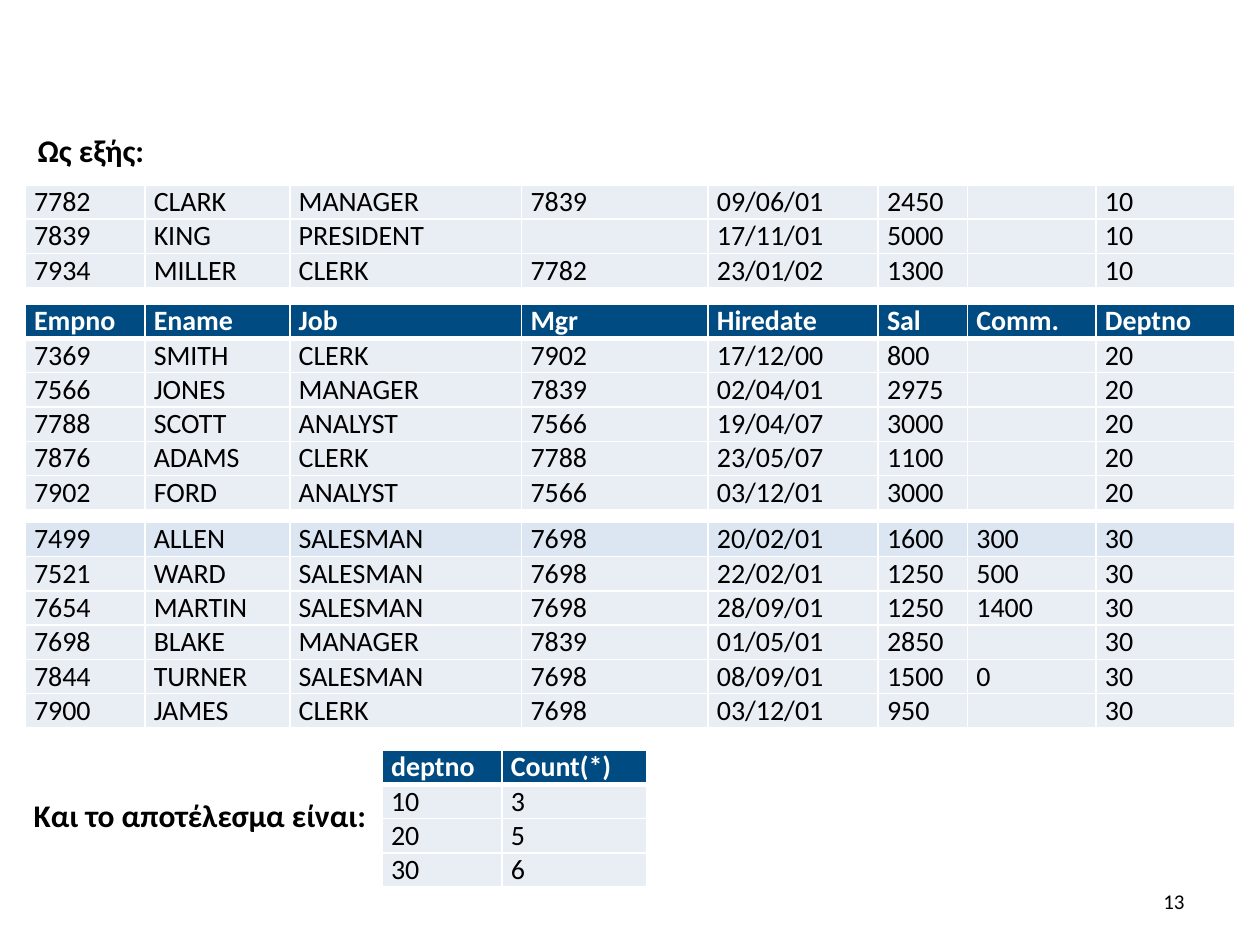
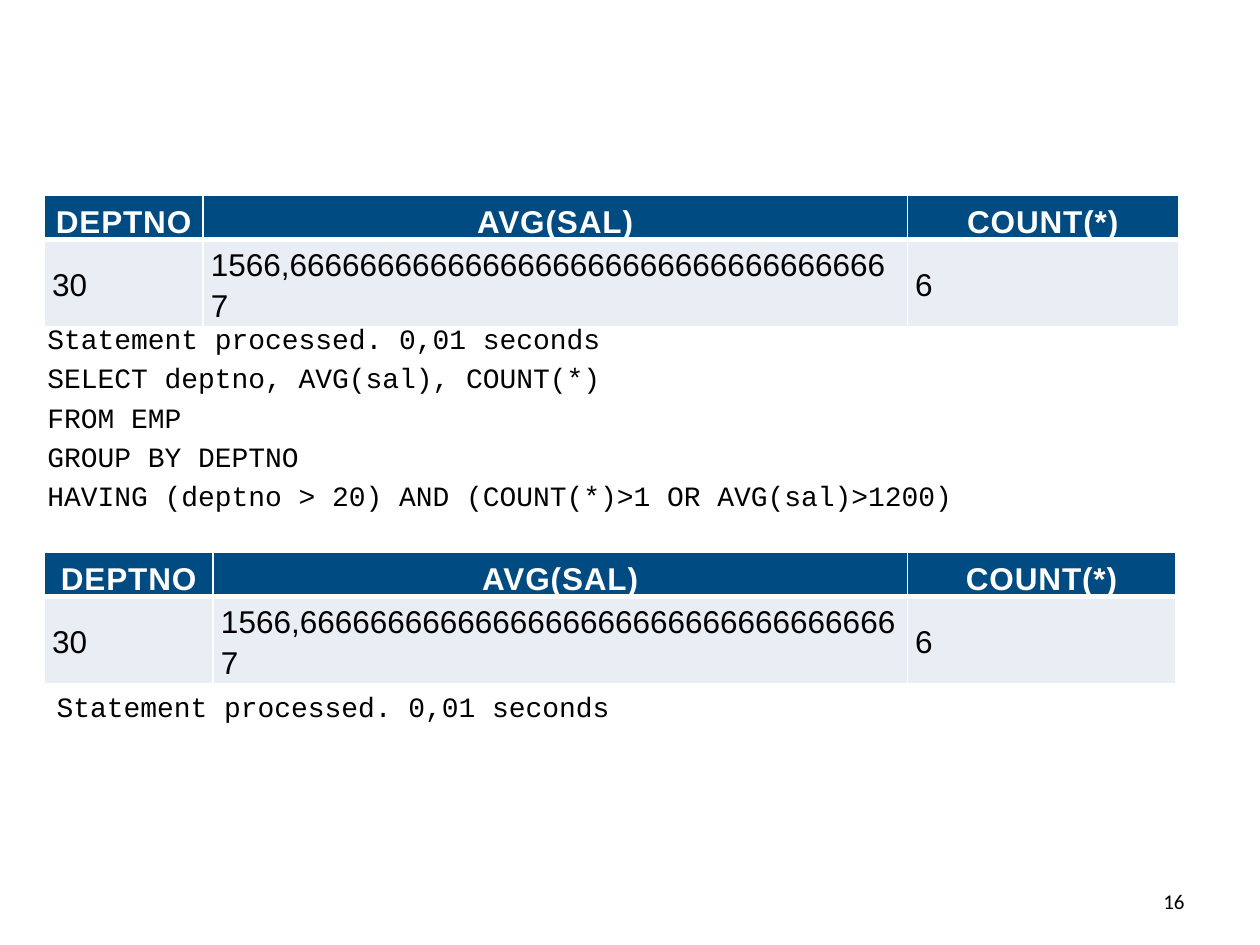
"""Build two slides on SQL grouping: employees split by department, and HAVING results."""
from lxml.etree import SubElement
from pptx import Presentation
from pptx.dml.color import RGBColor
from pptx.enum.text import MSO_ANCHOR, MSO_AUTO_SIZE, PP_ALIGN
from pptx.oxml.ns import qn
from pptx.util import Pt

NAVY, PALE, LIGHT_BLUE = "004B82", "E9EDF4", "DCE6F2"
WHITE, BLACK = "FFFFFF", "000000"

LABEL = {"name": "Calibri", "size": Pt(18), "bold": True}
CODE = {"name": "Courier New", "size": Pt(16)}
PAGE_NUMBER = {"name": "Calibri", "size": Pt(12)}
EMPLOYEE_STYLE = {
    "font": {"name": "Calibri", "size": Pt(16)},
    "cell": {"margin_left": Pt(5.1), "margin_right": Pt(5.1), "margin_top": 0, "margin_bottom": 0},
    "paragraph": {},
    "header_cell": {},
    "header_paragraph": {},
    "header_spacing": "0",
}
RESULT_STYLE = {
    "font": {"name": "Arial", "size": Pt(18)},
    "cell": {"margin_left": Pt(4.5), "margin_right": Pt(4.5), "margin_top": 0,
             "margin_bottom": 0, "vertical_anchor": MSO_ANCHOR.MIDDLE},
    "paragraph": {"line_spacing": 1.15},
    "header_cell": {"vertical_anchor": MSO_ANCHOR.BOTTOM},
    "header_paragraph": {"alignment": PP_ALIGN.CENTER},
    "header_spacing": "50",
}


def add_text(slide, box, lines, font, frame_format, paragraph_format):
    """Add a text box with one paragraph for each line."""
    frame = slide.shapes.add_textbox(*map(Pt, box)).text_frame
    for name, value in {"word_wrap": True, **frame_format}.items():
        setattr(frame, name, value)
    for index, line in enumerate(lines):
        paragraph = frame.add_paragraph() if index else frame.paragraphs[0]
        run = paragraph.add_run()
        run.text = line
        run.font.color.rgb = RGBColor.from_string(BLACK)
        for target, values in ((paragraph, paragraph_format), (run.font, font)):
            for name, value in values.items():
                setattr(target, name, value)


def add_grid(slide, left, top, widths, row_height, rows, style, has_header, first_fill):
    """Add a table with white rules, from rows of text parted by bars."""
    shape = slide.shapes.add_table(len(rows), len(widths), Pt(left), Pt(top),
                                   Pt(sum(widths)), Pt(row_height * len(rows)))
    table = shape.table
    table.first_row = has_header
    table.horz_banding = False
    for column, width in zip(table.columns, widths):
        column.width = Pt(width)
    for row_index, row in enumerate(rows):
        table.rows[row_index].height = Pt(row_height)
        is_header = has_header and row_index == 0
        for column_index, text in enumerate(row.split("|")):
            cell = table.cell(row_index, column_index)
            properties = cell._tc.get_or_add_tcPr()
            rules = {"a:lnL": 1, "a:lnR": 1,
                     "a:lnT": 3 if has_header and row_index == 1 else 1,
                     "a:lnB": 3 if is_header else 1}
            for tag, weight in rules.items():
                line = SubElement(properties, qn(tag), w=str(Pt(weight)))
                SubElement(SubElement(line, qn("a:solidFill")), qn("a:srgbClr"), val=WHITE)
            cell.fill.solid()
            cell.fill.fore_color.rgb = RGBColor.from_string(PALE if row_index else first_fill)
            paragraph = cell.text_frame.paragraphs[0]
            formats = [(cell, style["cell"]), (paragraph, style["paragraph"])]
            if is_header:
                formats += [(cell, style["header_cell"]), (paragraph, style["header_paragraph"])]
            if text:
                run = paragraph.add_run()
                run.text = text
                run.font.bold = is_header
                run.font.color.rgb = RGBColor.from_string(WHITE if is_header else BLACK)
                if is_header:
                    run._r.get_or_add_rPr().set("spc", style["header_spacing"])
                formats.append((run.font, style["font"]))
            else:
                size = str(int(style["font"]["size"].pt * 100))
                SubElement(paragraph._p, qn("a:endParaRPr"), sz=size)
            for target, values in formats:
                for name, value in values.items():
                    setattr(target, name, value)


presentation = Presentation()
presentation.slide_width, presentation.slide_height = Pt(720), Pt(540)
grouping_slide, having_slide = [
    presentation.slides.add_slide(presentation.slide_layouts[6]) for _ in range(2)]

employee_widths = [68.4, 82.8, 132.5, 106.5, 97.2, 51.1, 73.5, 79.2]
department_20 = [
    "Empno|Ename|Job|Mgr|Hiredate|Sal|Comm.|Deptno",
    "7369|SMITH|CLERK|7902|17/12/00|800||20",
    "7566|JONES|MANAGER|7839|02/04/01|2975||20",
    "7788|SCOTT|ANALYST|7566|19/04/07|3000||20",
    "7876|ADAMS|CLERK|7788|23/05/07|1100||20",
    "7902|FORD|ANALYST|7566|03/12/01|3000||20",
]
department_30 = [
    "7499|ALLEN|SALESMAN|7698|20/02/01|1600|300|30",
    "7521|WARD|SALESMAN|7698|22/02/01|1250|500|30",
    "7654|MARTIN|SALESMAN|7698|28/09/01|1250|1400|30",
    "7698|BLAKE|MANAGER|7839|01/05/01|2850||30",
    "7844|TURNER|SALESMAN|7698|08/09/01|1500|0|30",
    "7900|JAMES|CLERK|7698|03/12/01|950||30",
]
department_10 = [
    "7782|CLARK|MANAGER|7839|09/06/01|2450||10",
    "7839|KING|PRESIDENT||17/11/01|5000||10",
    "7934|MILLER|CLERK|7782|23/01/02|1300||10",
]
department_counts = ["deptno|Count(*)", "10|3", "20|5", "30|6"]
for left, top, widths, rows, has_header, first_fill in (
    (14.4, 173.8, employee_widths, department_20, True, NAVY),
    (14.4, 298.4, employee_widths, department_30, False, LIGHT_BLUE),
    (218.4, 428.6, employee_widths[:2], department_counts, True, NAVY),
    (14.4, 105.6, employee_widths, department_10, False, PALE),
):
    add_grid(grouping_slide, left, top, widths, 19.2, rows, EMPLOYEE_STYLE, has_header, first_fill)

label_frame = {"word_wrap": False, "auto_size": MSO_AUTO_SIZE.SHAPE_TO_FIT_TEXT}
for box, label in (
    ((14.4, 71.3, 76.3, 29), "Ως εξής:"),
    ((12.2, 451.4, 206.6, 29), "Και το αποτέλεσμα είναι:"),
):
    add_text(grouping_slide, box, [label], LABEL, label_frame, {})

processed = "Statement processed. 0,01 seconds"
query = [
    processed,
    "SELECT deptno, AVG(sal), COUNT(*)",
    "FROM EMP",
    "GROUP BY DEPTNO",
    "HAVING (deptno > 20) AND (COUNT(*)>1 OR AVG(sal)>1200)",
]
add_text(having_slide, (20, 180.3, 648, 108), query, CODE, {}, {"space_before": Pt(3.2)})

averages = ["DEPTNO|AVG(SAL)|COUNT(*)", "30|1566,66666666666666666666666666666666667|6"]
for top, widths in ((111.5, [90.7, 402.5, 154.8]), (315.5, [96.5, 396.7, 153.4])):
    add_grid(having_slide, 25.3, top, widths, 25.5, averages, RESULT_STYLE, True, NAVY)
add_text(having_slide, (25.3, 372.2, 360, 46), [processed], CODE, {"margin_top": Pt(22)}, {})

for slide, number in ((grouping_slide, "13"), (having_slide, "16")):
    add_text(slide, (516.2, 500.4, 167.8, 28.8), [number], PAGE_NUMBER,
             {"vertical_anchor": MSO_ANCHOR.MIDDLE}, {"alignment": PP_ALIGN.RIGHT})

presentation.save("out.pptx")
